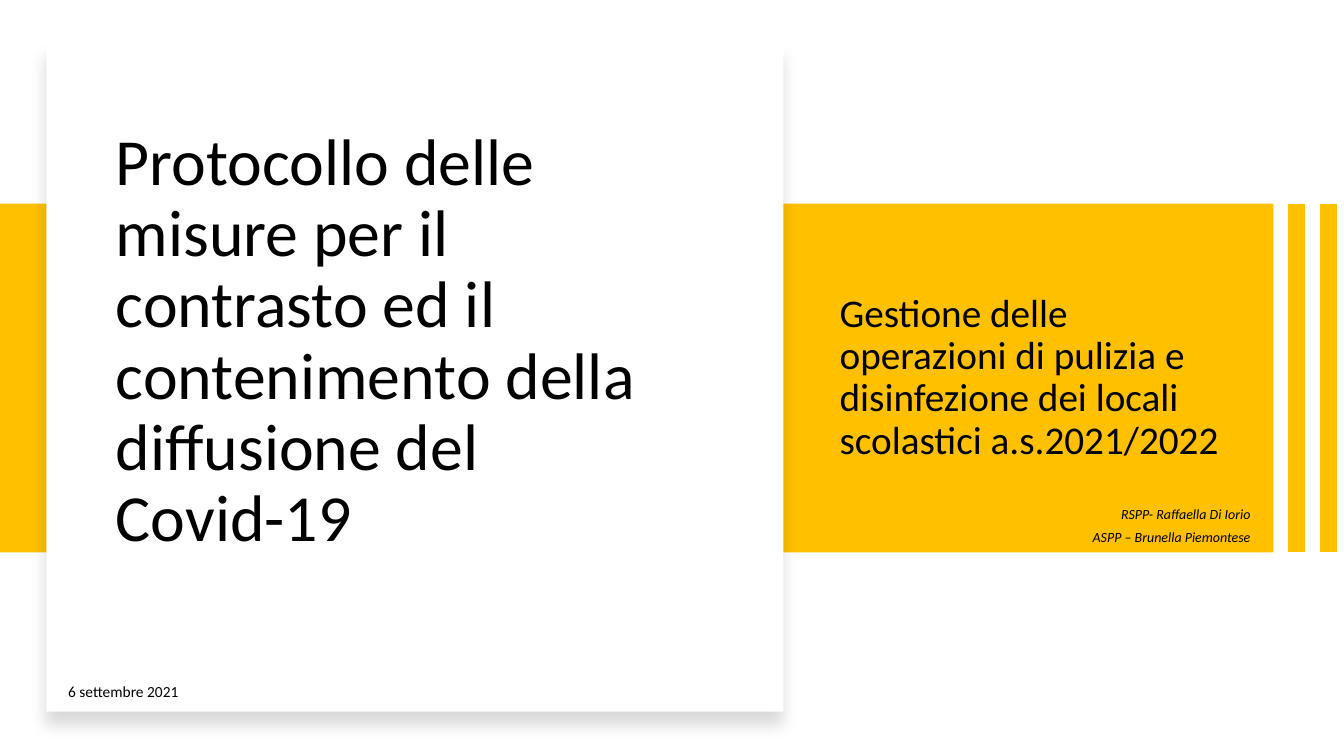
from lxml import etree
from pptx import Presentation
from pptx import util as u
from pptx.dml.color import RGBColor
from pptx.enum import shapes, text
from pptx.oxml.ns import qn

YELLOW = "FFC000"
BLACK = "000000"
WHITE = "FFFFFF"
BAND_TOP = 2.02
BAND_HEIGHT = 3.46


def color(value):
    return RGBColor.from_string(value)


def add_block(page, left, top, width, height, fill):
    block = page.shapes.add_shape(
        shapes.MSO_SHAPE.RECTANGLE,
        u.Inches(left), u.Inches(top), u.Inches(width), u.Inches(height))
    block.shadow.inherit = False
    block.fill.solid()
    block.fill.fore_color.rgb = color(fill)
    block.line.fill.background()
    return block


def add_soft_shadow(block, blur, distance, opacity):
    effects = block._element.spPr.find(qn("a:effectLst"))
    shadow = etree.SubElement(
        effects, qn("a:outerShdw"), blurRad=str(u.Pt(blur)),
        dist=str(u.Pt(distance)), dir="5400000", algn="t", rotWithShape="0")
    tint = etree.SubElement(shadow, qn("a:srgbClr"), val=BLACK)
    etree.SubElement(tint, qn("a:alpha"), val=str(opacity * 1000))


def add_stripe(page, x):
    stripe = page.shapes.add_connector(
        shapes.MSO_CONNECTOR.STRAIGHT, u.Inches(x), u.Inches(BAND_TOP),
        u.Inches(x), u.Inches(BAND_TOP + BAND_HEIGHT))
    stripe.line.color.rgb = color(YELLOW)
    stripe.line.width = u.Pt(12)
    etree.SubElement(stripe._element.spPr, qn("a:effectLst"))


def add_text(page, left, top, width, height, lines, size, middle=False,
             right=False, italic=False, spacing=1.0, after=0, bottom=0.05):
    box = page.shapes.add_textbox(
        u.Inches(left), u.Inches(top), u.Inches(width), u.Inches(height))
    frame = box.text_frame
    frame.word_wrap = True
    frame.margin_bottom = u.Inches(bottom)
    frame.vertical_anchor = (
        text.MSO_ANCHOR.MIDDLE if middle else text.MSO_ANCHOR.TOP)
    frame.text = "\n".join(lines)
    for para in frame.paragraphs:
        para.alignment = text.PP_ALIGN.RIGHT if right else text.PP_ALIGN.LEFT
        para.line_spacing = spacing
        para.space_after = u.Pt(after)
        para.font.name = "Calibri"
        para.font.size = u.Pt(size)
        para.font.italic = italic
        para.font.color.rgb = color(BLACK)


def main():
    deck = Presentation()
    deck.slide_width = u.Inches(13.33)
    deck.slide_height = u.Inches(7.5)
    page = deck.slides.add_slide(deck.slide_layouts[6])

    add_block(page, 0, BAND_TOP, 12.63, BAND_HEIGHT, YELLOW)
    for x in (12.86, 13.18):
        add_stripe(page, x)
    card = add_block(page, 0.46, 0.43, 7.31, 6.63, WHITE)
    add_soft_shadow(card, blur=11, distance=10, opacity=15)

    add_text(page, 1.05, 1.06, 6.12, 5.38,
             ["Protocollo delle misure per il contrasto ed il contenimento "
              "della diffusione del Covid-19"],
             47, middle=True, spacing=0.9, bottom=0.76)
    add_text(page, 8.23, 2.59, 3.96, 2.32,
             ["Gestione delle operazioni di pulizia e disinfezione dei "
              "locali scolastici a.s.2021/2022"],
             28, middle=True, spacing=0.9)
    add_text(page, 8.23, 4.98, 4.27, 0.49,
             ["RSPP- Raffaella Di Iorio", "ASPP – Brunella Piemontese"],
             10, right=True, italic=True, spacing=0.9, after=6)
    add_text(page, 0.46, 6.72, 1.41, 0.29, ["6 settembre 2021"], 11,
             right=True)

    deck.save("out.pptx")


if __name__ == "__main__":
    main()
